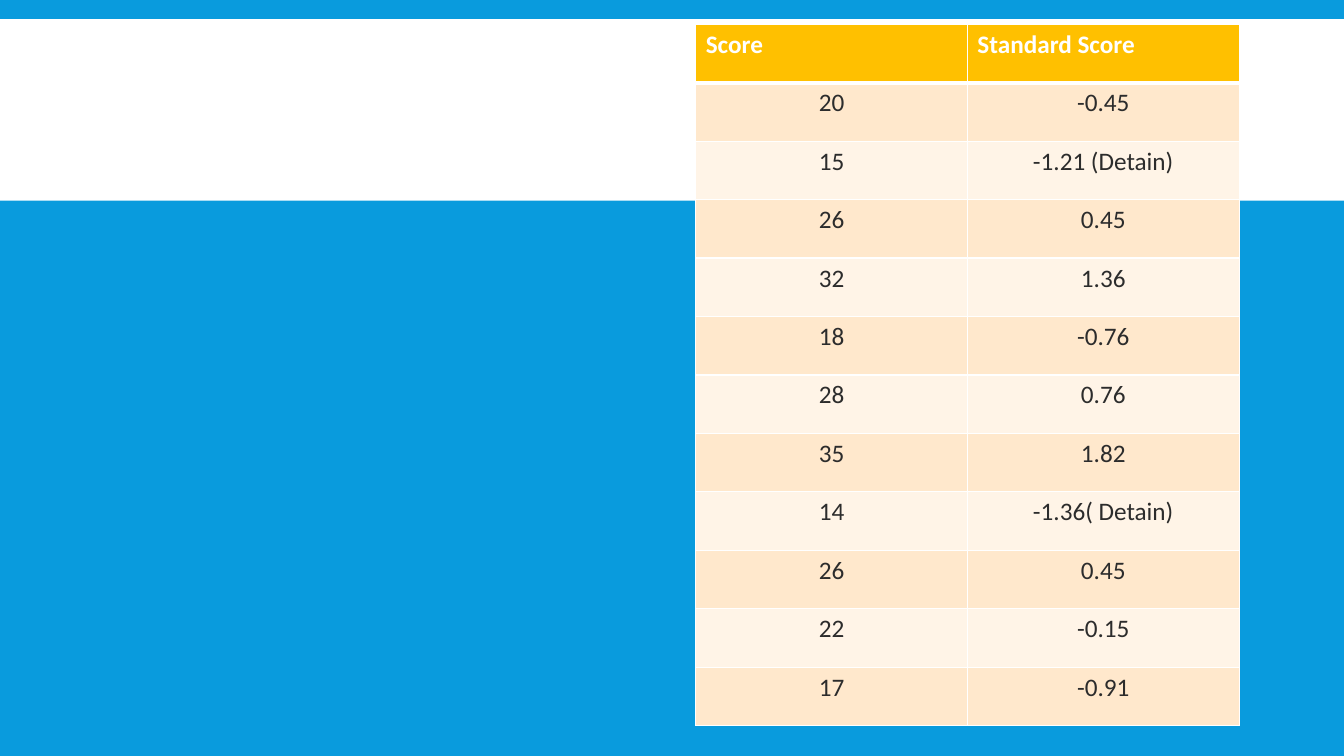
from dataclasses import dataclass

from lxml import etree
from pptx import Presentation
from pptx import util as u
from pptx.dml.color import RGBColor
from pptx.enum import shapes, text
from pptx.oxml import ns


@dataclass(frozen=True)
class Theme:
    blue: str = "099BDD"
    white: str = "FFFFFF"
    gold: str = "FFC000"
    ink: str = "2C2C2C"
    bands: tuple = ("FFE8CC", "FFF4E7")
    font: str = "Calibri"
    size: int = 18
    thin: int = 1
    thick: int = 3


SCORES = [
    ("Score", "Standard Score"),
    ("20", "-0.45"),
    ("15", "-1.21 (Detain)"),
    ("26", "0.45"),
    ("32", "1.36"),
    ("18", "-0.76"),
    ("28", "0.76"),
    ("35", "1.82"),
    ("14", "-1.36( Detain)"),
    ("26", "0.45"),
    ("22", "-0.15"),
    ("17", "-0.91"),
]


class Deck:
    """Draws the parts of the current slide in one style."""

    def __init__(self, theme):
        self.theme = theme
        self.show = Presentation()
        self.show.slide_width = u.Inches(13.33)
        self.show.slide_height = u.Inches(7.5)
        self.slide = self.show.slides.add_slide(self.show.slide_layouts[6])
        self.paint(self.slide.background.fill, theme.blue)

    def paint(self, fill, color):
        fill.solid()
        fill.fore_color.rgb = RGBColor.from_string(color)

    def band(self, left, top, width, height):
        box = self.slide.shapes.add_shape(
            shapes.MSO_SHAPE.RECTANGLE, *map(u.Inches, (left, top, width, height)))
        box.shadow.inherit = False
        box.line.fill.background()
        self.paint(box.fill, self.theme.white)

    def edge(self, cell, side, width):
        props = cell._tc.get_or_add_tcPr()
        line = etree.SubElement(props, ns.qn(f"a:ln{side}"), w=str(u.Pt(width)))
        fill = etree.SubElement(line, ns.qn("a:solidFill"))
        etree.SubElement(fill, ns.qn("a:srgbClr"), val=self.theme.white)

    def cell(self, cell, words, row):
        look, head = self.theme, row == 0
        for side in "LRTB":
            rule = (row, side) in ((0, "B"), (1, "T"))
            self.edge(cell, side, look.thick if rule else look.thin)
        self.paint(cell.fill, look.gold if head else look.bands[(row - 1) % 2])
        cell.text_frame.text = words
        para = cell.text_frame.paragraphs[0]
        para.alignment = text.PP_ALIGN.LEFT if head else text.PP_ALIGN.CENTER
        font = para.runs[0].font
        font.name, font.size, font.bold = look.font, u.Pt(look.size), head
        font.color.rgb = RGBColor.from_string(look.white if head else look.ink)

    def table(self, rows, left, top, width, height):
        grid = self.slide.shapes.add_table(
            len(rows), len(rows[0]), *map(u.Inches, (left, top, width, height))).table
        for r, row in enumerate(rows):
            for c, words in enumerate(row):
                self.cell(grid.cell(r, c), words, r)


def main():
    deck = Deck(Theme())
    deck.band(0, 0.19, 13.33, 1.8)
    deck.table(SCORES, 6.9, 0.24, 5.39, 6.96)
    deck.show.save("out.pptx")


if __name__ == "__main__":
    main()
